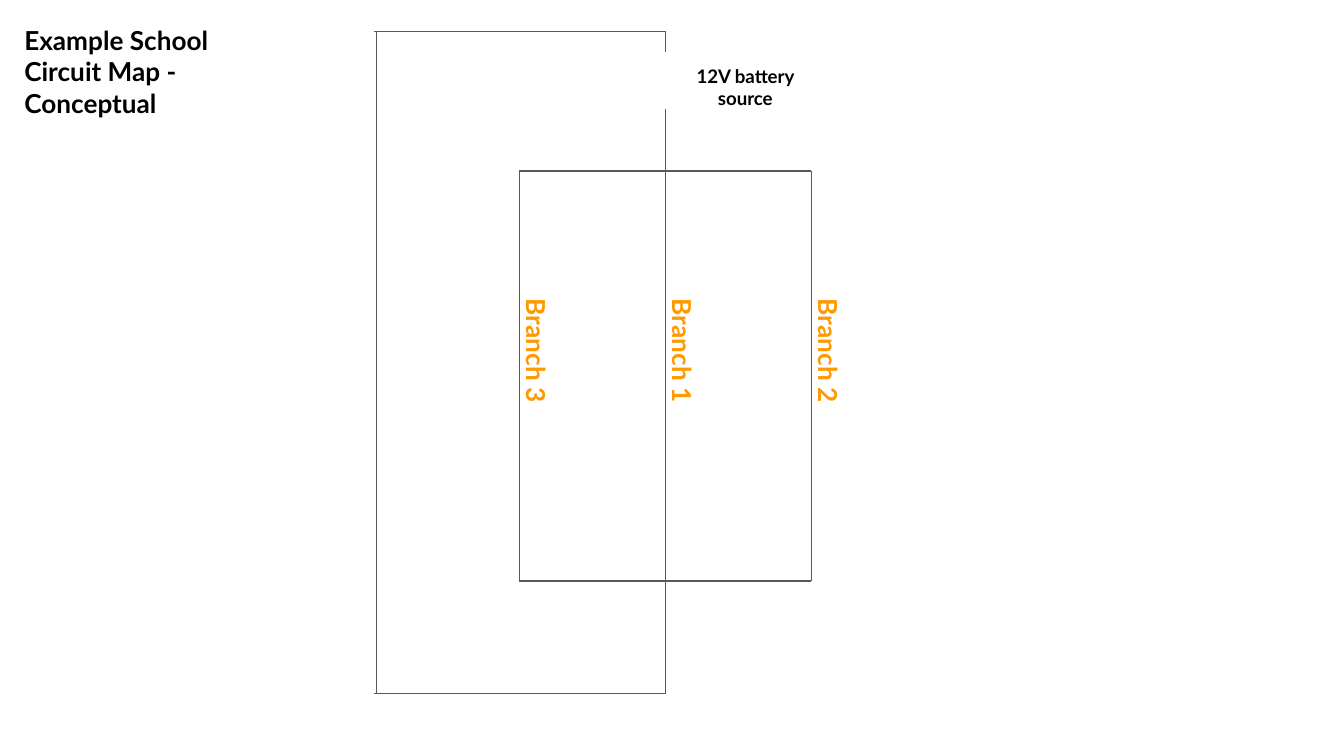
"""Build a slide with a conceptual map of a school circuit."""
from lxml import etree
from pptx import Presentation
from pptx.dml.color import RGBColor
from pptx.enum.shapes import MSO_CONNECTOR
from pptx.enum.text import MSO_ANCHOR, MSO_AUTO_SIZE, PP_ALIGN
from pptx.oxml.ns import qn
from pptx.util import Pt

STRAIGHT = MSO_CONNECTOR.STRAIGHT
TOP = MSO_ANCHOR.TOP
NO_AUTOFIT = MSO_AUTO_SIZE.NONE
LEFT, CENTER = PP_ALIGN.LEFT, PP_ALIGN.CENTER

BLACK = RGBColor(0x00, 0x00, 0x00)
GRAY = RGBColor(0x59, 0x59, 0x59)
ORANGE = RGBColor(0xFF, 0x99, 0x00)

OUTER_X, MAIN_X = 201.6, 356.5
OUTER_TOP, OUTER_BOTTOM = 17, 371.5
BATTERY_TOP, BATTERY_BOTTOM = 28.1, 58.3
BRANCH_GAP = 78.2
BRANCH_TOP, BRANCH_BOTTOM = 91.6, 311.2
BRANCH_OFFSETS = {"Branch 1": 0, "Branch 2": 1, "Branch 3": -1}
LABEL_WIDTH, LABEL_HEIGHT = 82.8, 27.4
LABEL_TOP, LABEL_SHIFT = 180.7, 11.1


def place(shape, left, top, width, height):
    """Set the position and size of a shape."""
    box = {"left": left, "top": top, "width": width, "height": height}
    for name, value in box.items():
        setattr(shape, name, Pt(value))


def write_text(shape, text, size, color, alignment=LEFT):
    """Write one formatted bold paragraph into a shape."""
    frame = shape.text_frame
    frame_format = {"word_wrap": True, "auto_size": NO_AUTOFIT, "vertical_anchor": TOP}
    frame_format.update({f"margin_{side}": Pt(7.2) for side in ("left", "top", "right", "bottom")})
    for name, value in frame_format.items():
        setattr(frame, name, value)
    paragraph = frame.paragraphs[0]
    paragraph.alignment = alignment
    run = paragraph.add_run()
    run.text = text
    for name, value in {"name": "Lato", "size": Pt(size), "bold": True}.items():
        setattr(run.font, name, value)
    run.font.color.rgb = color


def add_title(slide, text):
    """Move and fill the title placeholder."""
    title = slide.shapes.title
    place(title, 5.8, 5.8, 152.6, 86.4)
    write_text(title, text, 14, BLACK)


def add_label(slide, text, box, size, color, alignment=LEFT, rotation=0):
    """Add a text box, turned if needed."""
    label = slide.shapes.add_textbox(*map(Pt, box))
    label.rotation = rotation
    write_text(label, text, size, color, alignment)


def add_wire(slide, *ends):
    """Add a thin wire from one point to another."""
    wire = slide.shapes.add_connector(STRAIGHT, *map(Pt, ends))
    wire.line.color.rgb = GRAY
    wire.line.width = Pt(0.75)
    etree.SubElement(wire._element.spPr, qn("a:effectLst"))


def add_main_loop(slide):
    """Draw the outer loop, open where the battery sits."""
    for y in (OUTER_TOP, OUTER_BOTTOM):
        add_wire(slide, OUTER_X - 1.2, y, MAIN_X + 0.4, y)
    add_wire(slide, OUTER_X, OUTER_TOP, OUTER_X, OUTER_BOTTOM)
    add_wire(slide, MAIN_X, OUTER_TOP, MAIN_X, BATTERY_TOP)
    add_wire(slide, MAIN_X, BATTERY_BOTTOM, MAIN_X, OUTER_BOTTOM)


def add_branches(slide):
    """Draw the parallel branches with their turned labels."""
    for y in (BRANCH_TOP, BRANCH_BOTTOM):
        add_wire(slide, MAIN_X - BRANCH_GAP, y, MAIN_X + BRANCH_GAP, y)
    for name, offset in BRANCH_OFFSETS.items():
        x = MAIN_X + offset * BRANCH_GAP
        if offset:
            add_wire(slide, x, BRANCH_TOP, x, BRANCH_BOTTOM)
        box = (x + LABEL_SHIFT - LABEL_WIDTH / 2, LABEL_TOP, LABEL_WIDTH, LABEL_HEIGHT)
        add_label(slide, name, box, 14, ORANGE, rotation=90)


def main():
    """Build and save the presentation."""
    presentation = Presentation()
    presentation.slide_width, presentation.slide_height = Pt(720), Pt(405)
    slide = presentation.slides.add_slide(presentation.slide_layouts[5])
    add_title(slide, "Example School Circuit Map - Conceptual")
    add_main_loop(slide)
    add_branches(slide)
    add_label(slide, "12V battery source", (360, 27.4, 78.5, 23.8), 10, BLACK, CENTER)
    presentation.save("out.pptx")


if __name__ == "__main__":
    main()
